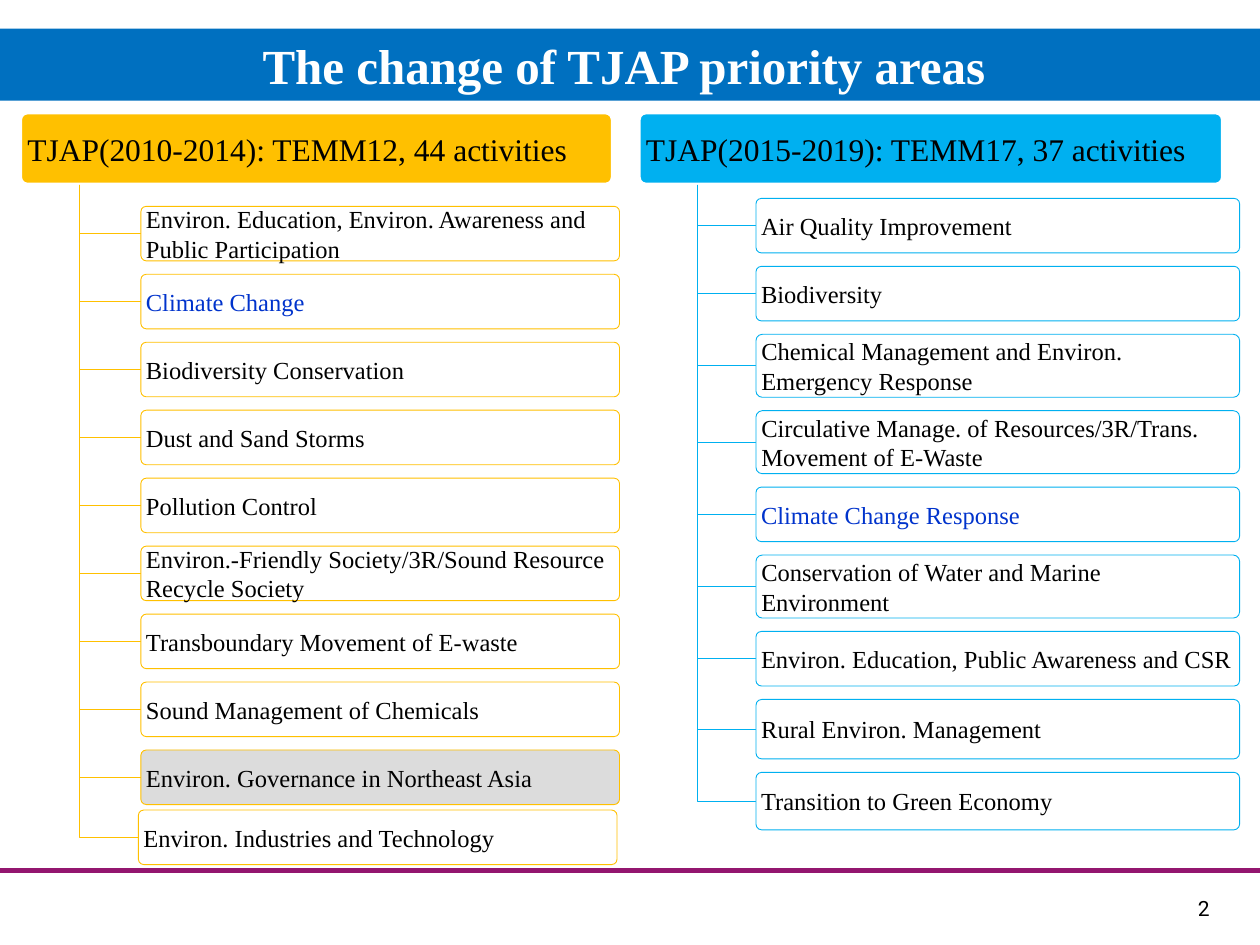
"""Build a slide comparing the TJAP priority areas of two periods."""
from lxml import etree
from pptx import Presentation, util as u
from pptx.dml.color import RGBColor
from pptx.enum import shapes, text
from pptx.oxml.ns import qn

COLORS = {
    "white": "FFFFFF", "black": "000000", "title": "0070C0", "rule": "93166F",
    "amber": "FFC000", "sky": "00B0F0", "gray": "D9D9D9", "climate": "0033CC",
}
SERIF = "Times New Roman"
TRUNK_TOP, GAP, ROW = 3.73, 0.27, 1.1

LEFT = {
    "head": "TJAP(2010-2014): TEMM12, 44 activities", "color": "amber",
    "head_x": 0.41, "head_w": 11.94, "trunk": 1.6, "x": 2.84, "w": 9.65, "top": 4.16,
    "areas": [
        ("Environ. Education, Environ. Awareness and Public Participation", {}),
        ("Climate Change", {"ink": "climate"}),
        ("Biodiversity Conservation", {}),
        ("Dust and Sand Storms", {}),
        ("Pollution Control", {}),
        ("Environ.-Friendly Society/3R/Sound Resource Recycle Society", {}),
        ("Transboundary Movement of E-waste", {}),
        ("Sound Management of Chemicals", {}),
        ("Environ. Governance in Northeast Asia", {"fill": "gray"}),
        ("Environ. Industries and Technology", {"dx": -0.05, "dy": -0.16}),
    ],
}
RIGHT = {
    "head": "TJAP(2015-2019): TEMM17, 37 activities", "color": "sky",
    "head_x": 12.88, "head_w": 11.77, "trunk": 14.07, "x": 15.24, "w": 9.75, "top": 4,
    "areas": [
        ("Air Quality Improvement", {}),
        ("Biodiversity", {}),
        ("Chemical Management and Environ. Emergency Response", {"h": 1.27}),
        ("Circulative Manage. of Resources/3R/Trans. Movement of E-Waste", {"h": 1.27}),
        ("Climate Change Response", {"ink": "climate"}),
        ("Conservation of Water and Marine Environment", {"h": 1.27}),
        ("Environ. Education, Public Awareness and CSR", {}),
        ("Rural Environ. Management", {"h": 1.2}),
        ("Transition to Green Economy", {"h": 1.16}),
    ],
}


def rgb(name):
    """Return the named colour."""
    return RGBColor.from_string(COLORS[name])


def add_run(p, content, size, ink="black", font=SERIF, bold=False):
    """Append a formatted run to a paragraph."""
    r = p.add_run()
    r.text = content
    r.font.size, r.font.name, r.font.bold = u.Pt(size), font, bold
    r.font.color.rgb = rgb(ink)


def add_box(s, kind, x, y, w, h, fill, line=None, line_width=0.5):
    """Add a filled shape without shadow, outlined if a line colour is given."""
    sp = s.shapes.add_shape(kind, u.Cm(x), u.Cm(y), u.Cm(w), u.Cm(h))
    sp.shadow.inherit = False
    sp.fill.solid()
    sp.fill.fore_color.rgb = rgb(fill)
    if line:
        sp.line.color.rgb = rgb(line)
        sp.line.width = u.Pt(line_width)
    else:
        sp.line.fill.background()
    return sp


def add_label_box(s, x, y, w, h, content, size, fill, line, line_width, inset, ink="black"):
    """Add a rounded box with left-aligned text."""
    sp = add_box(s, shapes.MSO_SHAPE.ROUNDED_RECTANGLE, x, y, w, h, fill, line, line_width)
    sp.adjustments[0] = 0.1
    tf = sp.text_frame
    tf.word_wrap = True
    tf.vertical_anchor = text.MSO_ANCHOR.MIDDLE
    tf.margin_left = tf.margin_right = u.Cm(inset)
    tf.margin_top = tf.margin_bottom = u.Cm(inset * 0.67)
    p = tf.paragraphs[0]
    p.alignment = text.PP_ALIGN.LEFT
    add_run(p, content, size, ink)
    return sp


def set_opacity(sp, percent):
    """Make the solid fill of a shape partly transparent."""
    fill = sp.fill.fore_color._xFill.find(qn("a:srgbClr"))
    etree.SubElement(fill, qn("a:alpha")).set("val", str(percent * 1000))


def add_elbow(s, trunk, x, y, color):
    """Draw an open line down the trunk and across to a box."""
    fb = s.shapes.build_freeform(u.Cm(trunk), u.Cm(TRUNK_TOP))
    fb.add_line_segments([(u.Cm(trunk), u.Cm(y)), (u.Cm(x), u.Cm(y))], close=False)
    sp = fb.convert_to_shape()
    sp.shadow.inherit = False
    sp.fill.background()
    sp.line.color.rgb = rgb(color)
    sp.line.width = u.Pt(0.5)


def add_plan(s, plan):
    """Add a plan heading and its tree of priority areas."""
    color, y = plan["color"], plan["top"]
    add_label_box(s, plan["head_x"], 2.27, plan["head_w"], 1.45, plan["head"],
                  18, color, "white", 2, 0.1)
    for area, opts in plan["areas"]:
        h = opts.get("h", ROW)
        x = plan["x"] + opts.get("dx", 0)
        y += opts.get("dy", 0)
        add_elbow(s, plan["trunk"], x, y + h / 2, color)
        sp = add_label_box(s, x, y, plan["w"], h, area, 14, opts.get("fill", "white"),
                           color, 0.5, 0.07, opts.get("ink", "black"))
        set_opacity(sp, 90)
        y += h + GAP


def add_title(s):
    """Add the full-width title band."""
    sp = add_box(s, shapes.MSO_SHAPE.RECTANGLE, 0, 0.58, 25.4, 1.45, "title")
    tf = sp.text_frame
    tf.word_wrap = True
    p = tf.paragraphs[0]
    p.alignment = text.PP_ALIGN.CENTER
    add_run(p, "The change of TJAP priority areas ", 28, "white", bold=True)


def add_footer(s):
    """Add the bottom rule and the page number."""
    y = u.Cm(17.55)
    rule = s.shapes.add_connector(shapes.MSO_CONNECTOR.STRAIGHT, 0, y, u.Cm(25.4), y)
    rule.line.color.rgb = rgb("rule")
    rule.line.width = u.Pt(3)
    etree.SubElement(rule._element.spPr, qn("a:effectLst"))
    tf = s.shapes.add_textbox(u.Cm(23.9), u.Cm(17.93), u.Cm(1.19), u.Cm(0.76)).text_frame
    tf.word_wrap = True
    add_run(tf.paragraphs[0], "2", 12, font="Roboto")


def main():
    """Build and save the slide."""
    prs = Presentation()
    prs.slide_width, prs.slide_height = u.Cm(25.4), u.Cm(19.05)
    s = prs.slides.add_slide(prs.slide_layouts[6])
    add_footer(s)
    add_title(s)
    for plan in (LEFT, RIGHT):
        add_plan(s, plan)
    prs.save("out.pptx")


if __name__ == "__main__":
    main()
